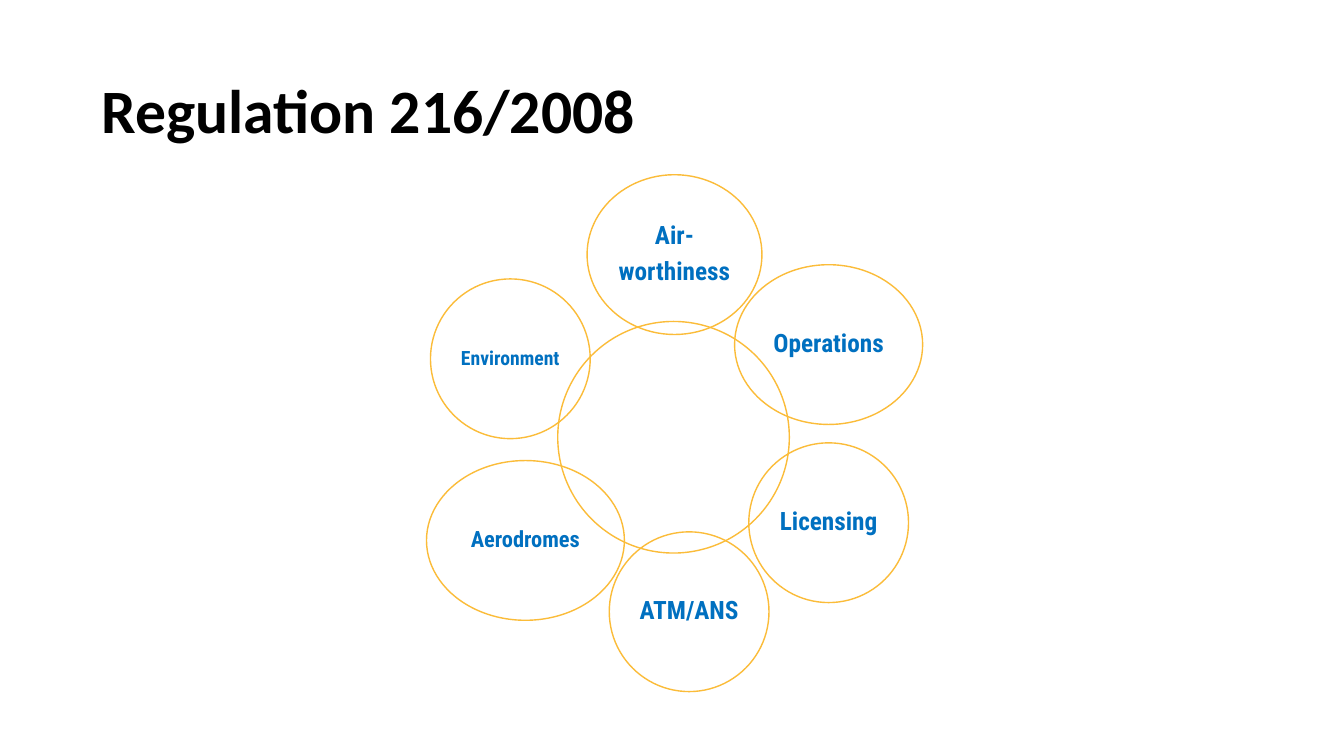
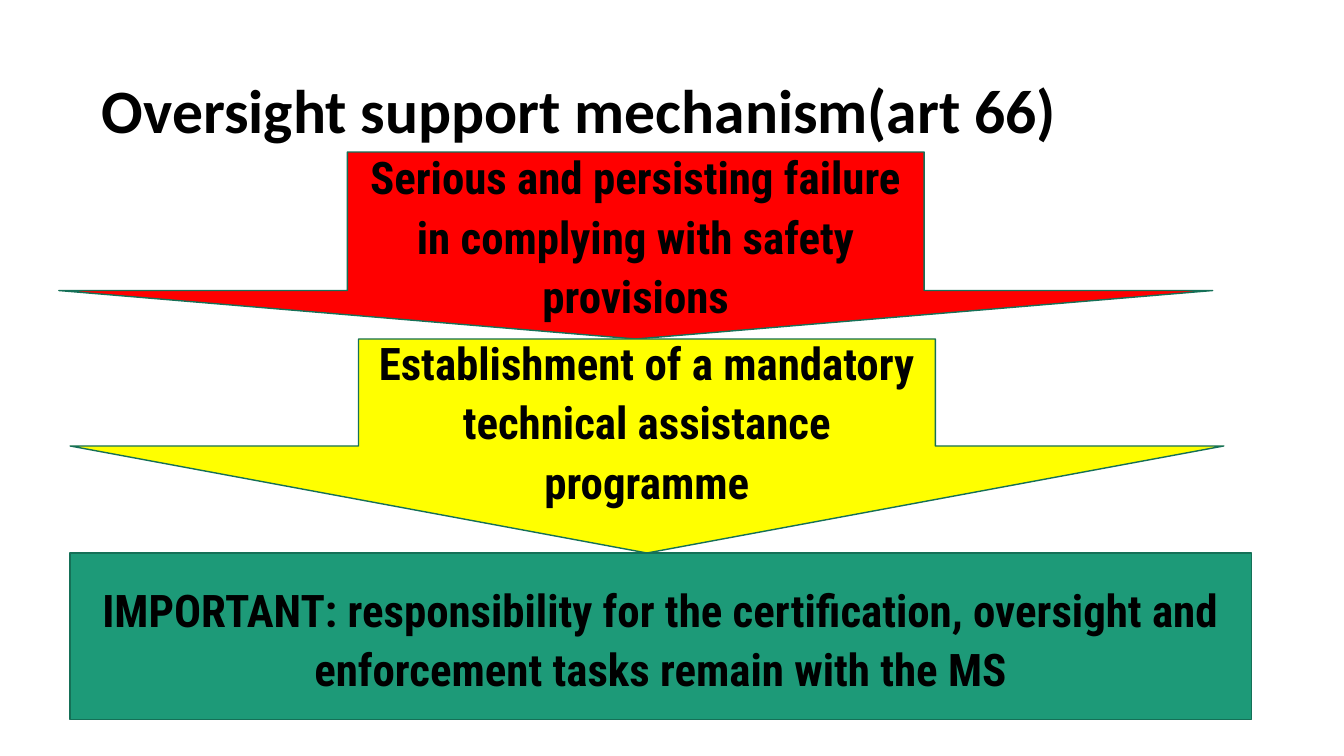
"""Build two slides on aviation safety rules: a ring of domains and a chain of arrows."""
from pptx import Presentation
from pptx.dml.color import RGBColor
from pptx.enum.shapes import MSO_SHAPE as Form
from pptx.enum.text import MSO_ANCHOR as Anchor, PP_ALIGN as Align
from pptx.util import Pt

BLACK, BLUE, GOLD = "000000", "0070C0", "FBBC39"
RED, YELLOW, GREEN, EDGE = "FF0000", "FFFF00", "1D9A78", "157057"
HEAD, BODY = "Calibri", "Roboto Condensed"


def write(shape, text, size, color, font, align, lead, pad=(7.2, 3.6), gap=0):
    """Fill the text frame of a shape with bold paragraphs."""
    frame = shape.text_frame
    across, down = map(Pt, pad)
    style = {"word_wrap": True, "vertical_anchor": Anchor.MIDDLE,
             "margin_left": across, "margin_right": across,
             "margin_top": down, "margin_bottom": down}
    for key, value in style.items():
        setattr(frame, key, value)
    frame.text = text
    for rank, para in enumerate(frame.paragraphs):
        para.alignment, para.line_spacing = align, lead
        para.space_before = Pt(gap if rank else 0)
        look = {"name": font, "size": Pt(size), "bold": True}
        for key, value in look.items():
            setattr(para.runs[0].font, key, value)
        para.runs[0].font.color.rgb = RGBColor.from_string(color)


def draw(slide, form, box, line, fill=None):
    """Add a preset shape with a thin outline and an optional fill."""
    shape = slide.shapes.add_shape(form, *map(Pt, box))
    shape.shadow.inherit = False
    if fill:
        shape.fill.solid()
        shape.fill.fore_color.rgb = RGBColor.from_string(fill)
    else:
        shape.fill.background()
    shape.line.color.rgb = RGBColor.from_string(line)
    shape.line.width = Pt(1)
    return shape


deck = Presentation()
deck.slide_width, deck.slide_height = Pt(957.6), Pt(538.6)
pages = []
for title in ("Regulation 216/2008", "Oversight support mechanism(art 66)"):
    page = deck.slides.add_slide(deck.slide_layouts[6])
    label = page.shapes.add_textbox(Pt(65.5), Pt(28.8), Pt(825.8), Pt(104.4))
    write(label, title, 43.9, BLACK, HEAD, Align.LEFT, 0.9)
    pages.append(page)
wheel, chain = pages

draw(wheel, Form.OVAL, (397.4, 229, 165, 165), GOLD)
TALL = 113.8
petals = [
    ("Air-\nworthiness", 480.6, 181.4, 124.6, 18),
    ("Operations", 590.4, 245.5, 134, 18),
    ("Licensing", 590.4, 372.4, TALL, 18),
    ("ATM/ANS", 491, 435.8, TALL, 18),
    ("Aerodromes", 374.4, 385, 141, 16),
    ("Environment", 363.6, 255.6, TALL, 14),
]
for text, mid, level, wide, size in petals:
    petal = draw(wheel, Form.OVAL, (mid - wide / 2, level - TALL / 2, wide, TALL), GOLD)
    write(petal, text, size, BLUE, BODY, Align.CENTER, 0.9, (1.44, 1.44), 6.3)

steps = [
    (Form.DOWN_ARROW, (42, 108.3, 822, 133.2), RED, 0.259,
     "Serious and persisting failure in complying with safety provisions"),
    (Form.DOWN_ARROW, (50, 241.5, 822, 152.5), YELLOW, 0.5,
     "Establishment of a mandatory technical assistance programme"),
    (Form.RECTANGLE, (50, 394, 841.7, 118.8), GREEN, None,
     "IMPORTANT: responsibility for the certification, oversight and "
     "enforcement tasks remain with the MS"),
]
for form, box, fill, tip, text in steps:
    step = draw(chain, form, box, EDGE, fill)
    if tip:
        step.adjustments[1] = tip
    write(step, text, 32, BLACK, BODY, Align.CENTER, 1.1)

deck.save("out.pptx")
